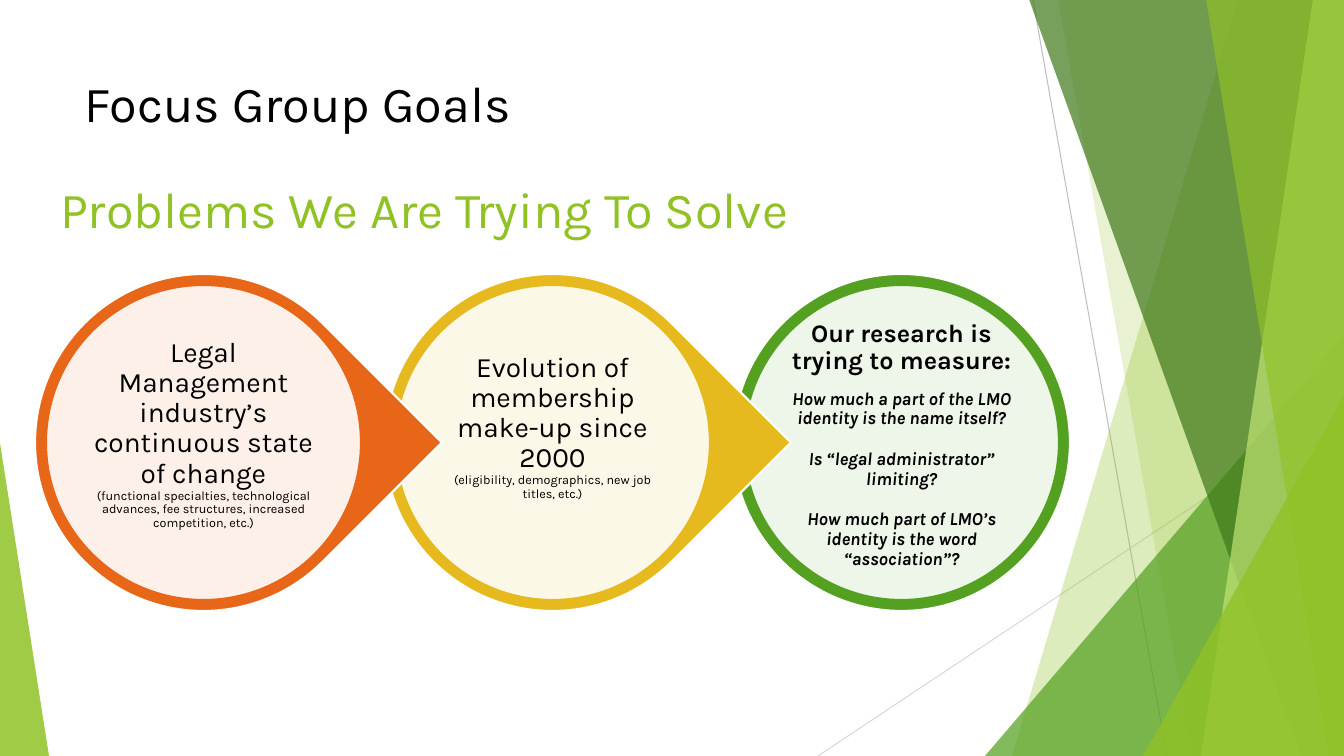
from lxml import etree
from pptx import Presentation
from pptx.dml.color import RGBColor
from pptx.enum.shapes import MSO_CONNECTOR, MSO_SHAPE
from pptx.enum.text import MSO_ANCHOR, PP_ALIGN
from pptx.oxml.ns import qn
from pptx.util import Emu, Pt

EMU_PER_PX = 914400 / 100.8
SLIDE_WIDTH, SLIDE_HEIGHT = 1344, 756

STRAIGHT = MSO_CONNECTOR.STRAIGHT
ELLIPSE, TEARDROP = MSO_SHAPE.OVAL, MSO_SHAPE.TEAR
TRIANGLE = MSO_SHAPE.ISOSCELES_TRIANGLE
TOP = MSO_ANCHOR.TOP
LEFT, CENTER = PP_ALIGN.LEFT, PP_ALIGN.CENTER

FONT = "Karla"
BLACK = RGBColor(0x00, 0x00, 0x00)
WHITE = RGBColor(0xFF, 0xFF, 0xFF)
LIME = RGBColor(0x90, 0xC2, 0x26)
PALE_LIME = RGBColor(0xC0, 0xE4, 0x74)
GREEN = RGBColor(0x54, 0xA0, 0x21)
DARK_GREEN = RGBColor(0x3F, 0x78, 0x19)
YELLOW = RGBColor(0xE6, 0xB9, 0x1E)
ORANGE = RGBColor(0xE7, 0x66, 0x18)
GRAY = RGBColor(0xBF, 0xBF, 0xBF)
LIGHT_GRAY = RGBColor(0xD9, 0xD9, 0xD9)

# Goal circles: equal steps from left to right
GOAL_LEFT, GOAL_TOP, GOAL_STEP, GOAL_SIZE = 35, 274, 349, 337
RING, TEXT_INDENT, TEXT_WIDTH, TEXT_HEIGHT = 11, 53, 231, 225

HEADING = {"size": Pt(36)}
LEAD = {"size": Pt(20)}
DETAIL = {"size": Pt(9)}
MEASURE = {"size": Pt(18), "bold": True}
QUESTION = {"size": Pt(13), "bold": True, "italic": True}

# Colour, outer shape, text top, paragraphs as (text, format, points after)
GOALS = [
    (ORANGE, TEARDROP, 338, [
        ("Legal Management industry’s continuous state of change", LEAD, 0),
        ("(functional specialties, technological advances, fee structures, "
         "increased competition, etc.)", DETAIL, 0)]),
    (YELLOW, TEARDROP, 353, [
        ("Evolution of membership make-up since 2000", LEAD, 0),
        ("(eligibility, demographics, new job titles, etc.)", DETAIL, 0)]),
    (GREEN, ELLIPSE, 321, [
        ("Our research is trying to measure:", MEASURE, 10),
        ("How much a part of the LMO identity is the name itself?", QUESTION, 15),
        ("Is “legal administrator” limiting?", QUESTION, 15),
        ("How much part of LMO’s identity is the word “association”?",
         QUESTION, 0)]),
]


def px(length):
    return Emu(round(length * EMU_PER_PX))


def paint(shape, color, opacity=100, line_color=None):
    shape.shadow.inherit = False
    shape.fill.solid()
    shape.fill.fore_color.rgb = color
    if opacity < 100:
        color_element = shape.fill._xPr.find(qn("a:solidFill"))[0]
        alpha = etree.SubElement(color_element, qn("a:alpha"))
        alpha.set("val", str(opacity * 1000))
    if line_color is None:
        shape.line.fill.background()
    else:
        shape.line.color.rgb = line_color
        shape.line.width = Pt(1.5)


def add_preset(slide, kind, left, top, width, height):
    return slide.shapes.add_shape(kind, px(left), px(top), px(width), px(height))


def add_thin_line(slide, start, end, color):
    line = slide.shapes.add_connector(
        STRAIGHT, px(start[0]), px(start[1]), px(end[0]), px(end[1]))
    line.line.color.rgb = color
    line.line.width = Pt(0.75)
    etree.SubElement(line._element.spPr, qn("a:effectLst"))


def add_band(slide, top_left, bottom_left, color, opacity):
    """Full-height band reaching the right edge of the slide."""
    builder = slide.shapes.build_freeform(top_left, -1, scale=EMU_PER_PX)
    builder.add_line_segments([
        (SLIDE_WIDTH, -1), (SLIDE_WIDTH, SLIDE_HEIGHT),
        (bottom_left, SLIDE_HEIGHT)], close=True)
    paint(builder.convert_to_shape(), color, opacity)


def add_corner(slide, left, top, width, apex, color, opacity):
    """Right triangle standing on the bottom edge of the slide."""
    triangle = add_preset(slide, TRIANGLE, left, top, width, SLIDE_HEIGHT - top)
    triangle.adjustments[0] = apex
    paint(triangle, color, opacity)


def add_text(slide, box, paragraphs, color=BLACK, align=LEFT, inset=(10, 5),
             line_spacing=1.0):
    frame = slide.shapes.add_textbox(*map(px, box)).text_frame
    frame.word_wrap = True
    frame.vertical_anchor = TOP
    frame.margin_left = frame.margin_right = px(inset[0])
    frame.margin_top = frame.margin_bottom = px(inset[1])
    for index, (text, text_format, space_after) in enumerate(paragraphs):
        paragraph = frame.add_paragraph() if index else frame.paragraphs[0]
        paragraph.alignment = align
        paragraph.line_spacing = line_spacing
        paragraph.space_after = Pt(space_after)
        run = paragraph.add_run()
        run.text = text
        run.font.name = FONT
        run.font.color.rgb = color
        for name, value in text_format.items():
            setattr(run.font, name, value)


def add_goal(slide, index, color, kind, text_top, paragraphs):
    left = GOAL_LEFT + index * GOAL_STEP
    outer = add_preset(slide, kind, left, GOAL_TOP, GOAL_SIZE, GOAL_SIZE)
    if kind == TEARDROP:
        outer.rotation = 45
    paint(outer, color, line_color=WHITE)
    inner_size = GOAL_SIZE - 2 * RING
    inner = add_preset(slide, ELLIPSE, left + RING, GOAL_TOP + RING,
                       inner_size, inner_size)
    paint(inner, WHITE, 90, color)
    add_text(slide, (left + TEXT_INDENT, text_top, TEXT_WIDTH, TEXT_HEIGHT),
             paragraphs, align=CENTER, inset=(3, 0), line_spacing=0.9)


def add_backdrop(slide):
    add_thin_line(slide, (1033, 0), (1167, SLIDE_HEIGHT), GRAY)
    add_thin_line(slide, (SLIDE_WIDTH, 406), (818, SLIDE_HEIGHT), LIGHT_GRAY)
    add_band(slide, 1238, 1012, LIME, 30)
    add_band(slide, 1058, 1192, LIME, 20)
    add_corner(slide, 985, 336, 359, 1, GREEN, 72)
    add_band(slide, 1029, 1301, DARK_GREEN, 70)
    add_band(slide, 1313, 1201, PALE_LIME, 70)
    add_band(slide, 1206, 1329, LIME, 65)
    add_corner(slide, 1143, 396, 201, 1, LIME, 80)
    add_corner(slide, 0, 443, 49, 0, LIME, 85)


def main():
    presentation = Presentation()
    presentation.slide_width = px(SLIDE_WIDTH)
    presentation.slide_height = px(SLIDE_HEIGHT)
    slide = presentation.slides.add_slide(presentation.slide_layouts[6])

    add_backdrop(slide)

    # Headings
    add_text(slide, (75, 67, 948, 145), [("Focus Group Goals", HEADING, 0)])
    add_text(slide, (50, 173, 1159, 146),
             [("Problems We Are Trying To Solve", HEADING, 0)], LIME)

    # Goals, from right to left so each point overlaps the next circle
    for index, goal in reversed(list(enumerate(GOALS))):
        add_goal(slide, index, *goal)

    presentation.save("out.pptx")


if __name__ == "__main__":
    main()
